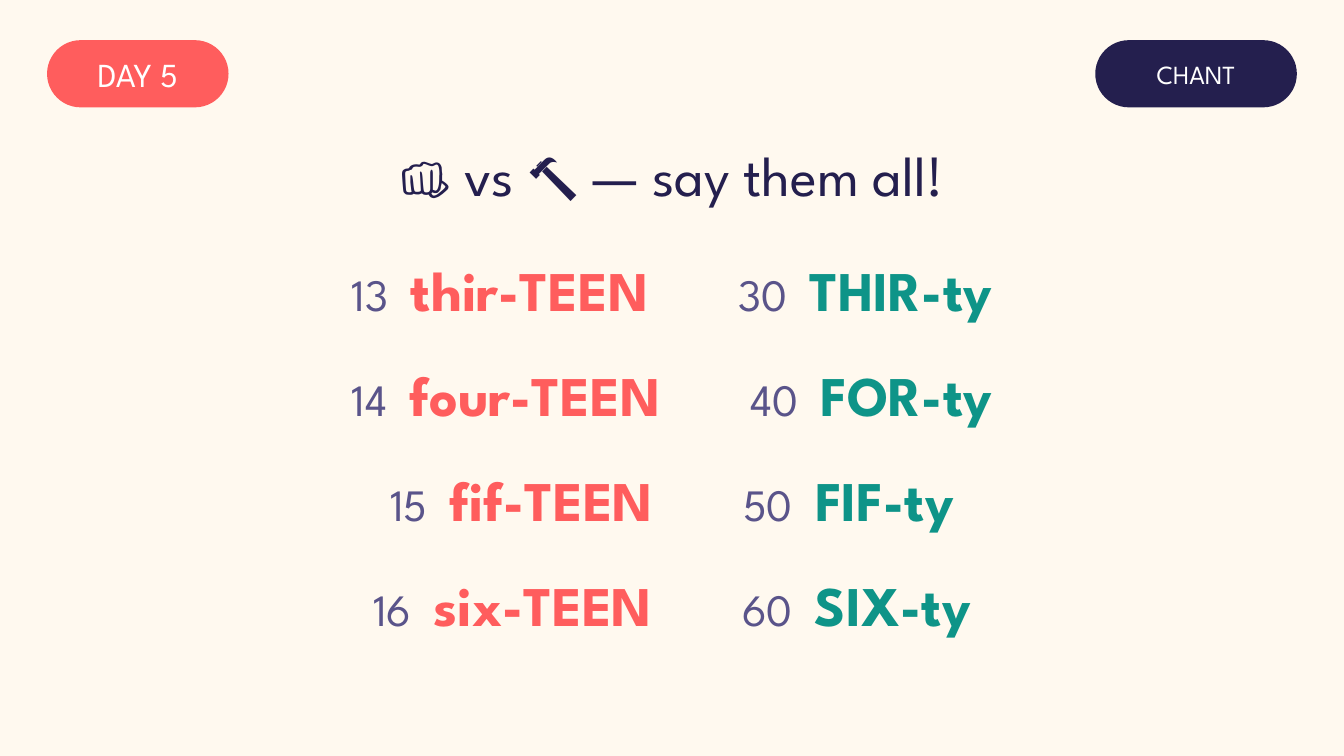
from dataclasses import dataclass

from lxml.etree import SubElement
from pptx import Presentation
from pptx.dml.color import RGBColor
from pptx.enum.shapes import MSO_SHAPE as Shape
from pptx.enum.text import MSO_ANCHOR as Anchor, MSO_AUTO_SIZE as AutoSize, PP_ALIGN as Align
from pptx.oxml.ns import qn
from pptx.util import Cm, Pt

FONT = "League Spartan"
CREAM = RGBColor(0xFF, 0xF9, 0xEF)
CORAL = RGBColor(0xFF, 0x5D, 0x5D)
NAVY = RGBColor(0x24, 0x1F, 0x4E)
VIOLET = RGBColor(0x5A, 0x54, 0x8A)
TEAL = RGBColor(0x0E, 0x94, 0x88)
WHITE = RGBColor(0xFF, 0xFF, 0xFF)

PAGE_WIDTH = 25.4
ROW_PITCH = 56.16
LINE_HEIGHT = 28
WORD_GAP = 6
COLUMN_GAP = 42


@dataclass(frozen=True)
class Pill:
    label: str
    left: float
    width: float
    size: int
    color: RGBColor


@dataclass(frozen=True)
class ChantRow:
    teen: str
    teen_word: str
    ten: str
    ten_word: str


PILLS = [
    Pill("DAY 5", 0.89, 3.43, 18, CORAL),
    Pill("CHANT", 20.7, 3.81, 14, NAVY),
]
ROWS = [
    ChantRow("13", "thir-TEEN", "30", "THIR-ty"),
    ChantRow("14", "four-TEEN", "40", "FOR-ty"),
    ChantRow("15", "fif-TEEN", "50", "FIF-ty"),
    ChantRow("16", "six-TEEN", "60", "SIX-ty"),
]


def add_span(para, text: str, *, size: int, color: RGBColor, bold: bool = False, tracking: int = 0) -> None:
    span = para.add_run()
    span.text = text
    span.font.name = FONT
    span.font.size = Pt(size)
    span.font.bold = bold
    span.font.color.rgb = color
    if tracking:
        span.font._element.set("spc", str(tracking * 100))


def place(box, top: float, height: float) -> None:
    box.left, box.top = Cm(0), Cm(top)
    box.width, box.height = Cm(PAGE_WIDTH), Cm(height)
    frame = box.text_frame
    frame.word_wrap = True
    frame.auto_size = AutoSize.NONE
    frame.vertical_anchor = Anchor.MIDDLE


def draw_pill(page, pill: Pill) -> None:
    box = page.shapes.add_shape(
        Shape.ROUNDED_RECTANGLE, Cm(pill.left), Cm(0.76), Cm(pill.width), Cm(1.27)
    )
    box.adjustments[0] = 0.5
    box.shadow.inherit = False
    box.fill.solid()
    box.fill.fore_color.rgb = pill.color
    box.line.fill.background()
    frame = box.text_frame
    frame.margin_left = frame.margin_right = frame.margin_top = frame.margin_bottom = 0
    frame.vertical_anchor = Anchor.MIDDLE
    para = frame.paragraphs[0]
    para.alignment = Align.CENTER
    add_span(para, pill.label, size=pill.size, color=WHITE)


def draw_title(page, text: str) -> None:
    box = page.shapes.title
    place(box, 2.41, 1.78)
    para = box.text_frame.paragraphs[0]
    para.alignment = Align.CENTER
    add_span(para, text, size=30, color=NAVY)


def draw_chant(page, rows: list[ChantRow]) -> None:
    box = page.placeholders[1]
    place(box, 4.7, 7.77)
    frame = box.text_frame
    for index, row in enumerate(rows):
        para = frame.add_paragraph() if index else frame.paragraphs[0]
        para.alignment = Align.CENTER
        para.line_spacing = Pt(LINE_HEIGHT)
        para.space_before = Pt(ROW_PITCH - LINE_HEIGHT if index else 0)
        para.space_after = Pt(0)
        properties = para._p.get_or_add_pPr()
        properties.set("marL", "0")
        properties.set("indent", "0")
        SubElement(properties, qn("a:buNone"))
        add_span(para, row.teen, size=24, color=VIOLET)
        add_span(para, " ", size=24, color=VIOLET, tracking=WORD_GAP)
        add_span(para, row.teen_word, size=30, color=CORAL, bold=True)
        add_span(para, " ", size=24, color=VIOLET, tracking=COLUMN_GAP)
        add_span(para, row.ten, size=24, color=VIOLET)
        add_span(para, " ", size=24, color=VIOLET, tracking=WORD_GAP)
        add_span(para, row.ten_word, size=30, color=TEAL, bold=True)


def main() -> None:
    deck = Presentation()
    deck.slide_width, deck.slide_height = Cm(PAGE_WIDTH), Cm(14.29)
    page = deck.slides.add_slide(deck.slide_layouts[1])
    page.background.fill.solid()
    page.background.fill.fore_color.rgb = CREAM
    for pill in PILLS:
        draw_pill(page, pill)
    draw_title(page, "👊 vs 🔨 — say them all!")
    draw_chant(page, ROWS)
    deck.save("out.pptx")


if __name__ == "__main__":
    main()
